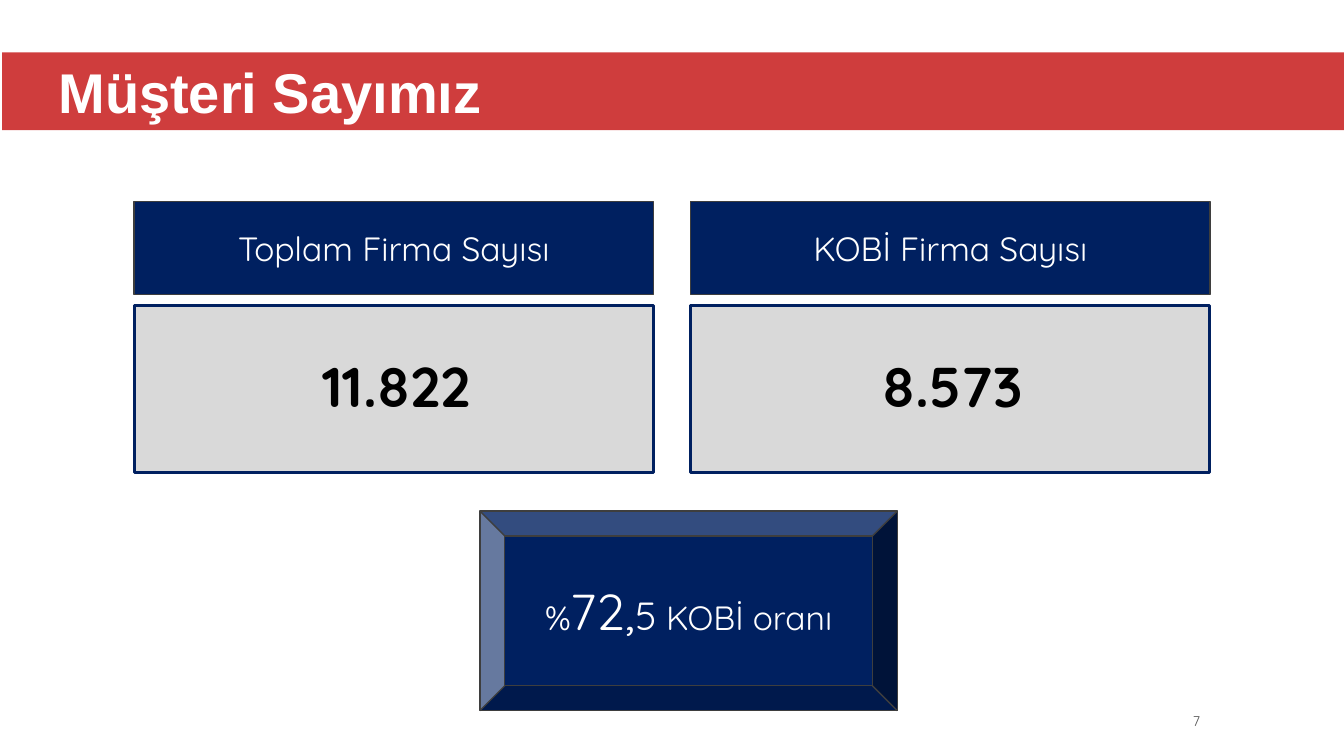
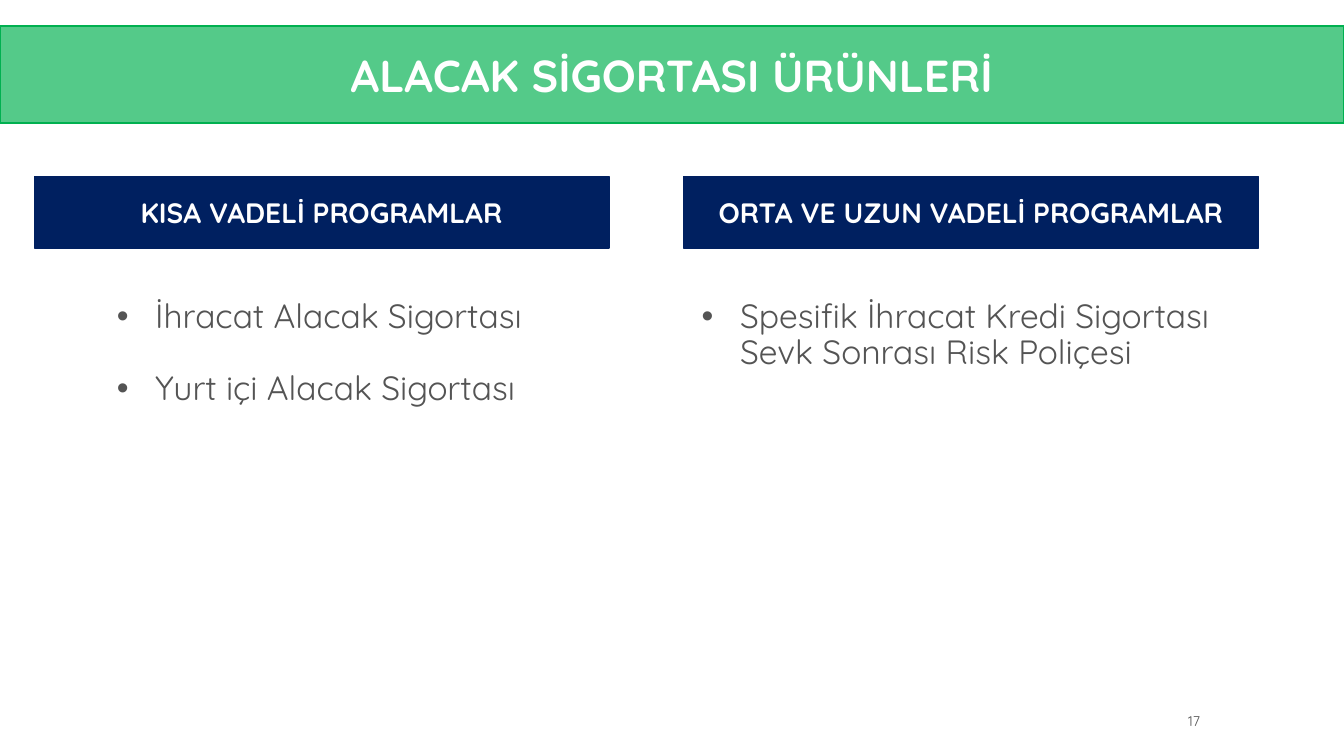
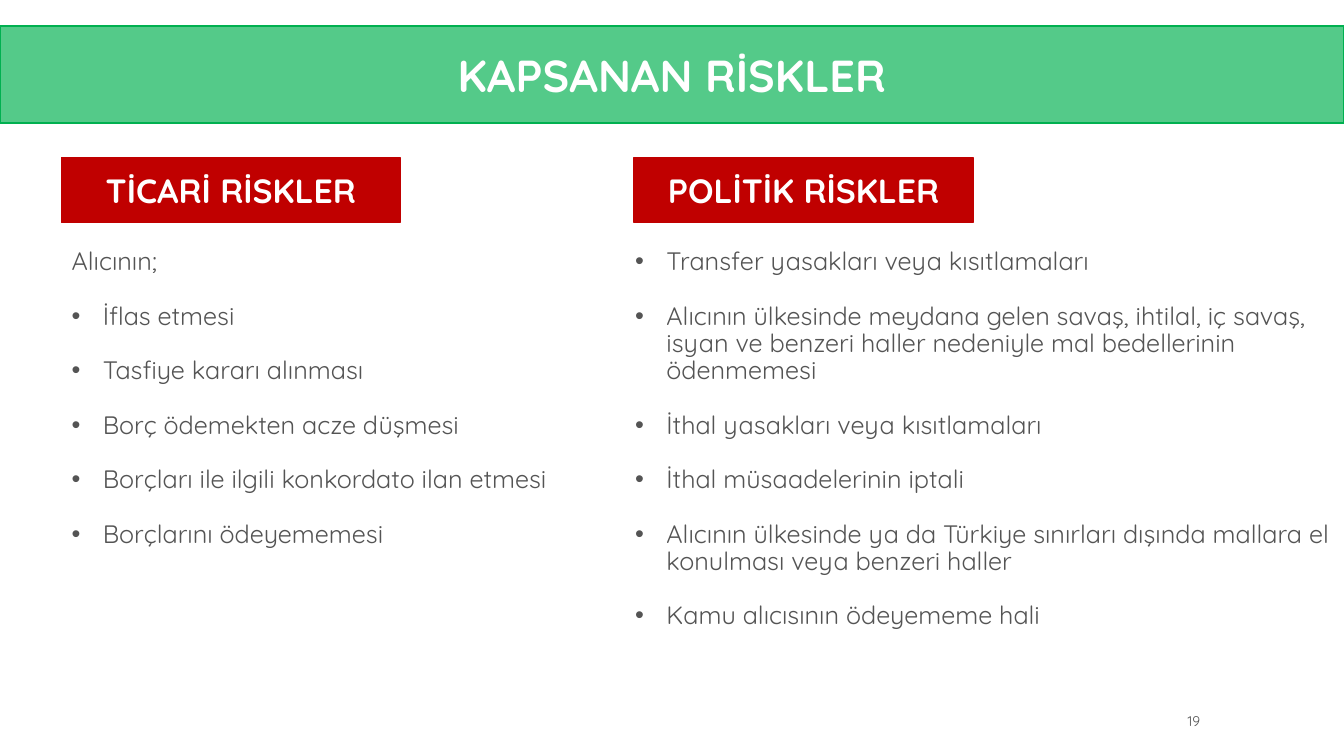
from dataclasses import dataclass

from lxml import etree
from pptx import Presentation
from pptx import util as u
from pptx.dml.color import RGBColor
from pptx.enum import shapes, text
from pptx.oxml.ns import qn

EMU_PER_PX = 9144
LEFT, CENTER, RIGHT = text.PP_ALIGN.LEFT, text.PP_ALIGN.CENTER, text.PP_ALIGN.RIGHT
TOP, MIDDLE = text.MSO_ANCHOR.TOP, text.MSO_ANCHOR.MIDDLE


def px(length):
    return u.Emu(length * EMU_PER_PX)


@dataclass(frozen=True)
class Theme:
    font: str = "Quicksand"
    banner_font: str = "Arial"
    white: str = "FFFFFF"
    black: str = "000000"
    gray: str = "545454"
    panel: str = "D9D9D9"
    outline: str = "3E3E3E"
    navy: str = "002060"
    red: str = "C00000"
    green: str = "00B050"
    number_size: int = 10
    item_size: int = 18
    heading_size: int = 20
    label_size: int = 24
    digit_size: int = 28
    title_size: int = 32
    accent_size: int = 36
    figure_size: int = 40
    tight: float = 0.9
    blank_line: float = 1.08


class Deck:
    def __init__(self, theme):
        self.theme = theme
        self.presentation = Presentation()
        self.presentation.slide_width = px(1333)
        self.presentation.slide_height = px(750)
        self.slide = None

    def new_slide(self, number):
        layout = self.presentation.slide_layouts.get_by_name("Two Content")
        self.slide = self.presentation.slides.add_slide(layout)
        shape = self.slide.shapes.add_textbox(*map(px, (1075, 705, 125, 20)))
        self.frame(shape)
        self.typeset(shape.text_frame.paragraphs[0], [(str(number), self.theme.number_size)],
                     self.theme.gray, RIGHT)

    def frame(self, shape, anchor=MIDDLE):
        settings = {"word_wrap": True, "auto_size": text.MSO_AUTO_SIZE.NONE,
                    "vertical_anchor": anchor}
        for name, value in settings.items():
            setattr(shape.text_frame, name, value)

    def place(self, shape, box):
        for name, value in zip(("left", "top", "width", "height"), box):
            setattr(shape, name, px(value))

    def paint(self, shape, fill, line=None, weight=1, opacity=100):
        shape.fill.solid()
        shape.fill.fore_color.rgb = RGBColor.from_string(fill)
        if opacity < 100:
            color = shape.fill._xPr.find(qn("a:solidFill"))[0]
            etree.SubElement(color, qn("a:alpha"), val=str(opacity * 1000))
        if line:
            shape.line.color.rgb = RGBColor.from_string(line)
            shape.line.width = u.Pt(weight)
        else:
            shape.line.fill.background()

    def typeset(self, paragraph, runs, color, alignment=LEFT, bold=False, font=None):
        paragraph.alignment = alignment
        for words, size in runs:
            run = paragraph.add_run()
            run.text = words
            settings = {"name": font or self.theme.font, "size": u.Pt(size), "bold": bold}
            for name, value in settings.items():
                setattr(run.font, name, value)
            run.font.color.rgb = RGBColor.from_string(color)

    def mark(self, paragraph, indent, bullet=False):
        properties = paragraph._p.get_or_add_pPr()
        properties.set("marL", str(px(indent)))
        properties.set("indent", str(px(-indent if bullet else 0)))
        if bullet:
            etree.SubElement(properties, qn("a:buFont"), typeface="Arial")
            etree.SubElement(properties, qn("a:buChar"), char="•")
        else:
            etree.SubElement(properties, qn("a:buNone"))

    def title(self, words, box, size, fill, opacity, line=None, alignment=CENTER,
              anchor=MIDDLE, font=None, inset=10):
        shape = self.slide.shapes.title
        self.place(shape, box)
        self.paint(shape, fill, line, opacity=opacity)
        self.frame(shape, anchor)
        shape.text_frame.margin_left = px(inset)
        self.typeset(shape.text_frame.paragraphs[0], [(words, size)], self.theme.white,
                     alignment, True, font)

    def product_title(self, words):
        theme = self.theme
        self.title(words, (0, 26, 1333, 96), theme.title_size, theme.green, 67, theme.green)

    def block(self, runs, box, fill, line, bold=False, kind=shapes.MSO_SHAPE.RECTANGLE):
        shape = self.slide.shapes.add_shape(kind, *map(px, box))
        shape.shadow.inherit = False
        self.paint(shape, fill, line)
        self.frame(shape)
        self.typeset(shape.text_frame.paragraphs[0], runs, self.theme.white, CENTER, bold)

    def figure(self, slot, words, box):
        theme = self.theme
        shape = self.slide.placeholders[slot]
        self.place(shape, box)
        self.paint(shape, theme.panel, theme.navy, 2.25)
        self.frame(shape)
        paragraph = shape.text_frame.paragraphs[0]
        paragraph.line_spacing = theme.tight
        paragraph.space_before = u.Pt(0)
        self.mark(paragraph, 5)
        self.typeset(paragraph, [(words, theme.figure_size)], theme.black, CENTER, True)

    def bullets(self, slot, items, box, size, indent, lead=None):
        theme = self.theme
        shape = self.slide.placeholders[slot]
        self.place(shape, box)
        self.frame(shape, TOP)
        lines = ([(lead, False)] if lead else []) + [(item, True) for item in items]
        for index, (words, bullet) in enumerate(lines):
            body = shape.text_frame
            paragraph = body.add_paragraph() if index else body.paragraphs[0]
            paragraph.line_spacing = theme.tight
            paragraph.space_before = u.Pt(size * theme.blank_line if index else 0)
            self.mark(paragraph, indent if bullet else 0, bullet)
            self.typeset(paragraph, [(words, size)], theme.gray)


def customer_slide(deck):
    theme = deck.theme
    deck.new_slide(7)
    deck.title("Müşteri Sayımız", (2, 52, 1332, 77), theme.figure_size, theme.red, 76,
               alignment=LEFT, anchor=TOP, font=theme.banner_font, inset=56)
    columns = [("Toplam Firma Sayısı", "11.822"), ("KOBİ Firma Sayısı", "8.573")]
    for index, (label, figure) in enumerate(columns):
        left = 133 + index * 552
        deck.block([(label, theme.label_size)], (left, 200, 515, 92), theme.navy, theme.outline)
        deck.figure(index + 1, figure, (left, 303, 515, 166))
    share = [("%", theme.label_size), ("72,", theme.accent_size),
             ("5", theme.digit_size), (" KOBİ oranı", theme.label_size)]
    deck.block(share, (476, 507, 414, 198), theme.navy, theme.outline,
               kind=shapes.MSO_SHAPE.BEVEL)


def product_slide(deck):
    theme = deck.theme
    deck.new_slide(17)
    deck.product_title("ALACAK SİGORTASI ÜRÜNLERİ")
    for index, heading in enumerate(("KISA VADELİ PROGRAMLAR", "ORTA VE UZUN VADELİ PROGRAMLAR")):
        deck.block([(heading, theme.heading_size)], (34 + index * 644, 175, 570, 71),
                   theme.navy, theme.navy, True)
    deck.bullets(1, ["İhracat Alacak Sigortası", "Yurt içi Alacak Sigortası"],
                 (106, 292, 520, 119), theme.label_size, 38)
    deck.bullets(2, ["Spesifik İhracat Kredi Sigortası Sevk Sonrası Risk Poliçesi"],
                 (686, 292, 542, 83), theme.label_size, 38)


def risk_slide(deck):
    theme = deck.theme
    deck.new_slide(19)
    deck.product_title("KAPSANAN RİSKLER")
    for index, heading in enumerate(("TİCARİ RİSKLER", "POLİTİK RİSKLER")):
        deck.block([(heading, theme.label_size)], (61 + index * 568, 156, 336, 65),
                   theme.red, theme.red, True)
    commercial = [
        "İflas etmesi",
        "Tasfiye kararı alınması",
        "Borç ödemekten acze düşmesi",
        "Borçları ile ilgili konkordato ilan etmesi",
        "Borçlarını ödeyememesi",
    ]
    political = [
        "Transfer yasakları veya kısıtlamaları",
        "Alıcının ülkesinde meydana gelen savaş, ihtilal, iç savaş, isyan ve benzeri haller "
        "nedeniyle mal bedellerinin ödenmemesi",
        "İthal yasakları veya kısıtlamaları",
        "İthal müsaadelerinin iptali",
        "Alıcının ülkesinde ya da Türkiye sınırları dışında mallara el konulması veya "
        "benzeri haller",
        "Kamu alıcısının ödeyememe hali",
    ]
    deck.bullets(1, commercial, (61, 242, 520, 310), theme.item_size, 31, "Alıcının;")
    deck.bullets(2, political, (620, 242, 713, 419), theme.item_size, 31)


def main():
    deck = Deck(Theme())
    for build in (customer_slide, product_slide, risk_slide):
        build(deck)
    deck.presentation.save("out.pptx")


if __name__ == "__main__":
    main()
